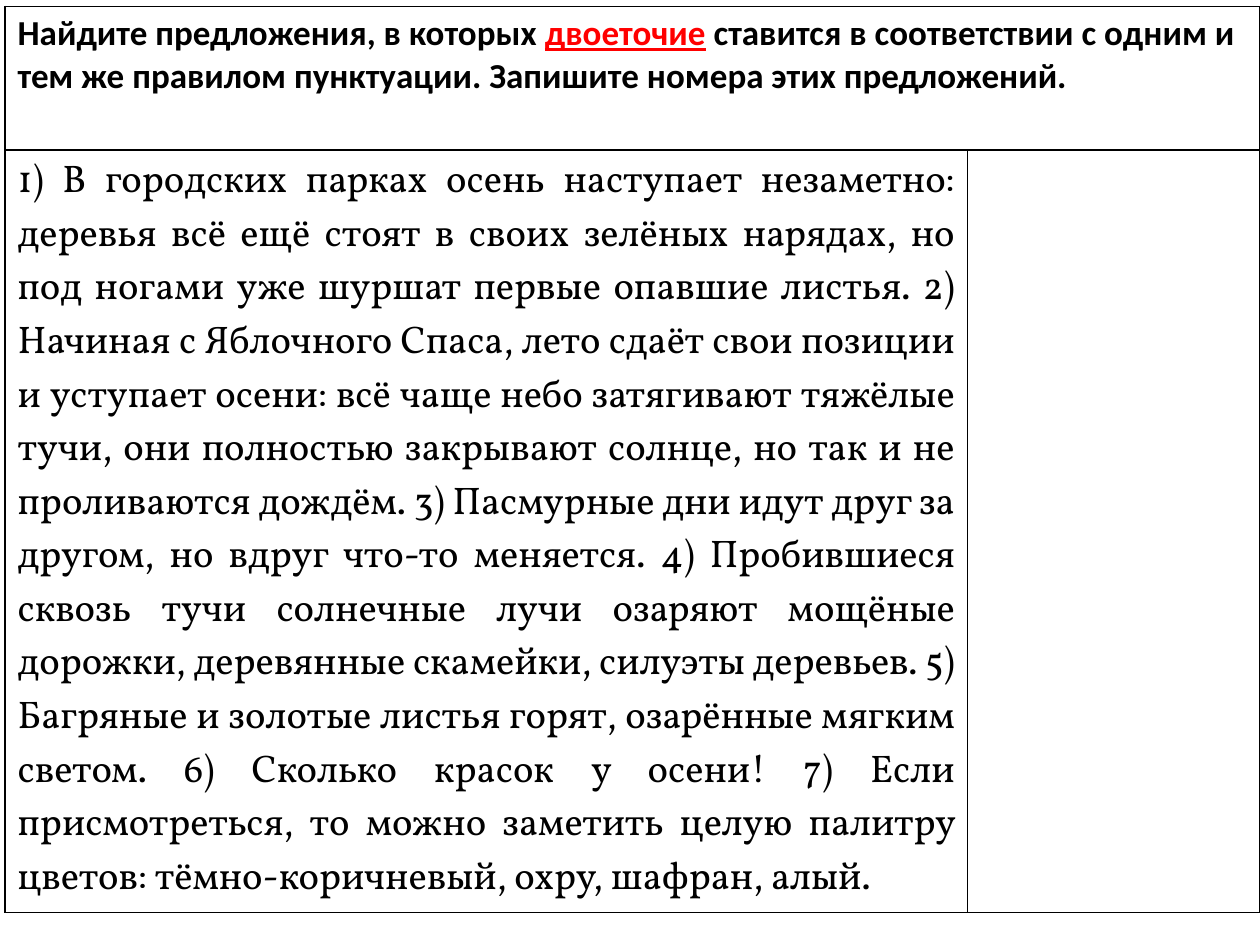
from dataclasses import dataclass
from typing import Optional

from lxml.etree import SubElement as Sub
from pptx import Presentation
from pptx.dml.color import RGBColor as Color
from pptx.enum.text import PP_ALIGN as Align
from pptx.oxml.ns import qn
from pptx.table import _Cell as Cell
from pptx.util import Inches, Pt


@dataclass(frozen=True)
class Theme:
    ink: str = "000000"
    accent: str = "FF0000"
    paper: str = "FFFFFF"
    head: str = "Calibri"
    body: str = "Vollkorn"
    head_size: int = 20
    body_size: int = 22
    line: int = 1


@dataclass(frozen=True)
class Span:
    text: str
    font: str
    size: int
    color: str
    bold: bool = False
    under: bool = False


THEME = Theme()
COLS = (7.64, 2.32)
ROWS = (1.14, 5.8)

TASK = [
    Span("Найдите предложения, в которых ", THEME.head, THEME.head_size, THEME.ink, True),
    Span("двоеточие", THEME.head, THEME.head_size, THEME.accent, True, True),
    Span(
        " ставится в соответствии с одним и тем же правилом пунктуации. "
        "Запишите номера этих предложений.",
        THEME.head, THEME.head_size, THEME.ink, True,
    ),
]
STORY = [
    Span(
        "1) В городских парках осень наступает незаметно: деревья всё ещё стоят "
        "в своих зелёных нарядах, но под ногами уже шуршат первые опавшие листья. "
        "2) Начиная с Яблочного Спаса, лето сдаёт свои позиции и уступает осени: "
        "всё чаще небо затягивают тяжёлые тучи, они полностью закрывают солнце, "
        "но так и не проливаются дождём. "
        "3) Пасмурные дни идут друг за другом, но вдруг что-то меняется. "
        "4) Пробившиеся сквозь тучи солнечные лучи озаряют мощёные дорожки, "
        "деревянные скамейки, силуэты деревьев. "
        "5) Багряные и золотые листья горят, озарённые мягким светом. "
        "6) Сколько красок у осени! "
        "7) Если присмотреться, то можно заметить целую палитру цветов: "
        "тёмно-коричневый, охру, шафран, алый.",
        THEME.body, THEME.body_size, THEME.ink,
    ),
]


def write(cell: Cell, spans: list[Span], align: Optional[Align] = None) -> None:
    para = cell.text_frame.paragraphs[0]
    para.alignment = align
    for span in spans:
        run = para.add_run()
        run.text = span.text
        font = run.font
        font.name = span.font
        font.size = Pt(span.size)
        font.bold = span.bold
        font.underline = span.under
        font.color.rgb = Color.from_string(span.color)


def frame(cell: Cell) -> None:
    props = cell._tc.get_or_add_tcPr()
    for side in ("L", "R", "T", "B"):
        line = Sub(props, qn(f"a:ln{side}"), w=str(Pt(THEME.line)))
        fill = Sub(line, qn("a:solidFill"))
        Sub(fill, qn("a:srgbClr"), val=THEME.ink)
    cell.fill.solid()
    cell.fill.fore_color.rgb = Color.from_string(THEME.paper)


def main() -> None:
    deck = Presentation()
    deck.slide_width, deck.slide_height = Inches(10), Inches(7.5)
    slide = deck.slides.add_slide(deck.slide_layouts[6])
    table = slide.shapes.add_table(
        len(ROWS), len(COLS), Inches(0.04), Inches(0.05),
        Inches(sum(COLS)), Inches(sum(ROWS)),
    ).table
    table.first_row = table.horz_banding = False
    for col, width in zip(table.columns, COLS):
        col.width = Inches(width)
    for row, height in zip(table.rows, ROWS):
        row.height = Inches(height)
    for cell in table.iter_cells():
        frame(cell)
    table.cell(0, 0).merge(table.cell(0, 1))
    write(table.cell(0, 0), TASK)
    write(table.cell(1, 0), STORY, Align.JUSTIFY)
    deck.save("out.pptx")


if __name__ == "__main__":
    main()
